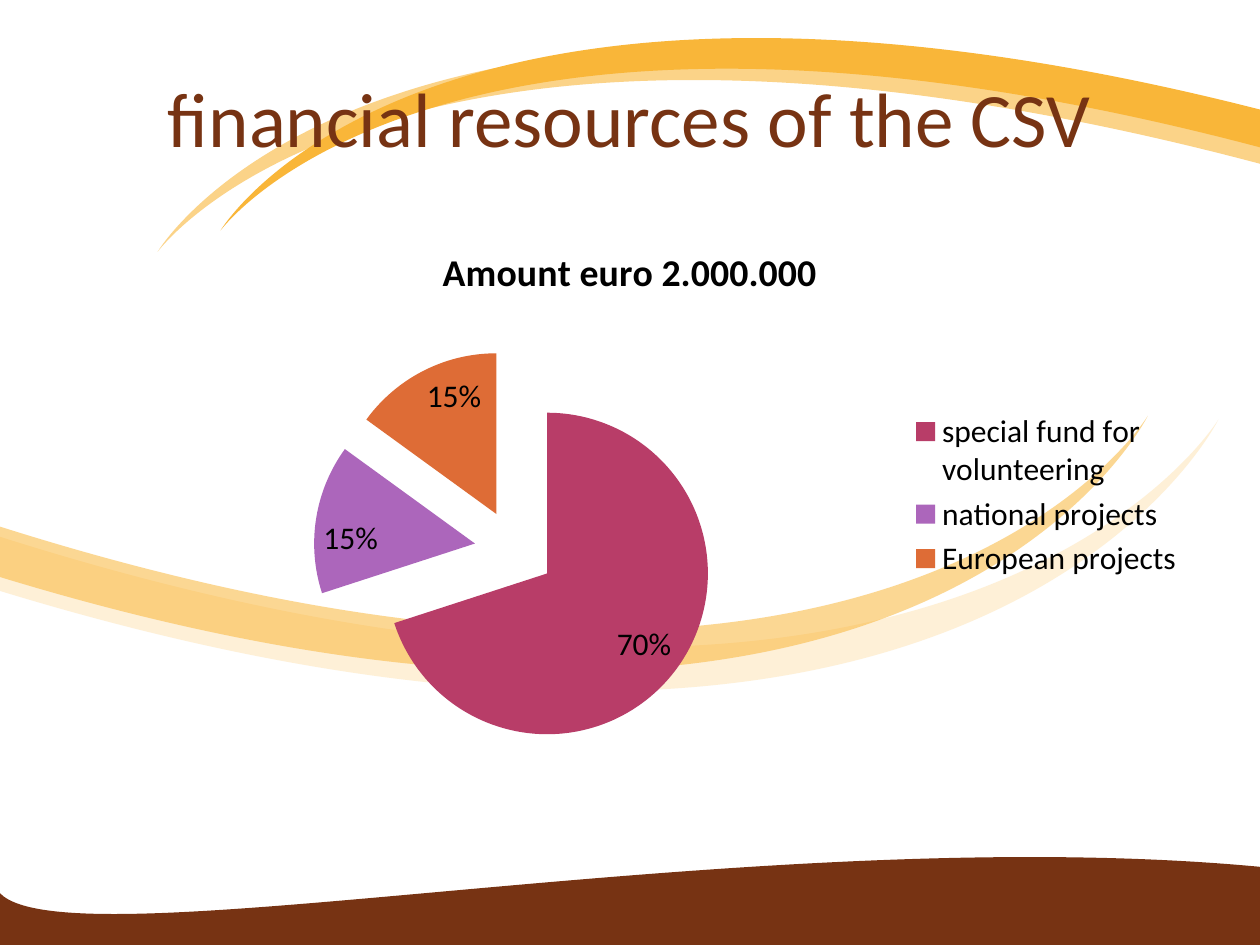
from lxml import etree
from pptx import Presentation
from pptx.chart.data import CategoryChartData
from pptx.dml.color import RGBColor
from pptx.enum.chart import XL_CHART_TYPE, XL_LABEL_POSITION, XL_LEGEND_POSITION
from pptx.enum.text import MSO_ANCHOR, PP_ALIGN
from pptx.oxml.ns import qn
from pptx.util import Inches, Pt

COLORS = {
    "brown": "773313", "cream": "FEF0D7", "sand": "FBD388", "amber": "F9B639",
    "text": "000000", "berry": "B83D68", "violet": "AC66BB", "orange": "DE6C36",
}
FONT = "Calibri"


class SlideBuilder:
    def __init__(self, slide):
        self.slide = slide

    def color(self, name):
        return RGBColor.from_string(COLORS[name])

    def style(self, font, size, color, bold=False):
        font.name, font.size, font.bold = FONT, Pt(size), bold
        font.color.rgb = self.color(color)

    def ribbon(self, start, segments, color, opacity=None):
        """Filled outline; a segment is one line end, or two controls and an end."""
        points = [(Inches(x), Inches(y)) for segment in segments for x, y in segment]
        builder = self.slide.shapes.build_freeform(Inches(start[0]), Inches(start[1]))
        builder.add_line_segments(points, close=True)
        shape = builder.convert_to_shape()
        shape.shadow.inherit = False
        shape.fill.solid()
        shape.fill.fore_color.rgb = self.color(color)
        shape.line.fill.background()

        # Merge each group of three steps into one cubic curve
        steps = iter(list(shape._element.iter(qn("a:lnTo"))))
        for segment in segments:
            group = [next(steps) for _ in segment]
            if len(group) == 3:
                curve = etree.Element(qn("a:cubicBezTo"))
                group[0].addprevious(curve)
                for step in group:
                    curve.append(step[0])
                    step.getparent().remove(step)

        if opacity:
            tone = shape._element.spPr.find(".//" + qn("a:srgbClr"))
            etree.SubElement(tone, qn("a:alpha"), val=str(opacity * 1000))

    def title(self, text, left, top, width, height):
        title = self.slide.shapes.title
        title.left, title.top = Inches(left), Inches(top)
        title.width, title.height = Inches(width), Inches(height)
        frame = title.text_frame
        frame.text = text
        frame.word_wrap = True
        frame.vertical_anchor = MSO_ANCHOR.MIDDLE
        frame.paragraphs[0].alignment = PP_ALIGN.CENTER
        self.style(frame.paragraphs[0].runs[0].font, 44, "brown")
        # Bring the title in front of the ribbons
        self.slide.shapes._spTree.append(title._element)

    def pie(self, heading, shares, slice_colors, left, top, width, height):
        data = CategoryChartData()
        data.categories = list(shares)
        data.add_series("Series 1", list(shares.values()))
        chart = self.slide.shapes.add_chart(
            XL_CHART_TYPE.PIE, Inches(left), Inches(top),
            Inches(width), Inches(height), data).chart
        self.style(chart.font, 18, "text")

        chart.has_title = True
        chart.chart_title.text_frame.text = heading
        heading_run = chart.chart_title.text_frame.paragraphs[0].runs[0]
        self.style(heading_run.font, 21.6, "text", bold=True)

        chart.has_legend = True
        chart.legend.position = XL_LEGEND_POSITION.RIGHT
        chart.legend.include_in_layout = False
        self.style(chart.legend.font, 18, "text")

        plot = chart.plots[0]
        plot.vary_by_categories = True
        series = plot.series[0]
        for index, color in enumerate(slice_colors):
            fill = series.points[index].format.fill
            fill.solid()
            fill.fore_color.rgb = self.color(color)
        # Pull the slices apart
        explosion = etree.Element(qn("c:explosion"), val="25")
        series._element.find(qn("c:dPt")).addprevious(explosion)

        plot.has_data_labels = True
        labels = plot.data_labels
        labels.show_percentage, labels.show_value = True, False
        labels.number_format, labels.number_format_is_linked = "0%", False
        labels.position = XL_LABEL_POSITION.INSIDE_END
        self.style(labels.font, 18, "text")
        self.place_plot(chart, 1.99 / width, 1.02 / height, 3.19 / width, 3.19 / height)

    def place_plot(self, chart, x, y, w, h):
        """Set the plot area as fractions of the chart."""
        plot_area = chart._chartSpace.find(".//" + qn("c:plotArea"))
        layout = plot_area.find(qn("c:layout"))
        if layout is None:
            layout = etree.Element(qn("c:layout"))
            plot_area.insert(0, layout)
        manual = etree.SubElement(layout, qn("c:manualLayout"))
        settings = [("layoutTarget", "inner"), ("xMode", "edge"), ("yMode", "edge"),
                    ("x", x), ("y", y), ("w", w), ("h", h)]
        for tag, value in settings:
            etree.SubElement(manual, qn("c:" + tag), val=str(value))


def main():
    deck = Presentation()
    deck.slide_width, deck.slide_height = Inches(10), Inches(7.5)
    page = SlideBuilder(deck.slides.add_slide(deck.slide_layouts[5]))

    # Ground wave
    page.ribbon((0, 7.09), [
        ((0.56, 7.67), (5.96, 6.5), (10, 6.88)),
        ((10, 7.09), (10.01, 7.32), (10.01, 7.54)),
        ((0, 7.51),),
    ], "brown")

    # Swooshes: outer edge to the tip, inner edge back, then the blunt end
    swooshes = [
        ((0, 4.26), (7.63, 6.68), (9.67, 3.33), (7.82, 7.08), (0, 4.69), "cream", None),
        ((10, 1.3), (3.09, -0.53), (1.25, 2), (2.92, -0.83), (10, 0.97), "sand", None),
        ((10, 1.17), (3.49, -0.55), (1.75, 1.83), (3.33, -0.83), (10, 0.87), "amber", None),
        ((0, 4.18), (7.2, 6.46), (9.11, 3.3), (7.37, 6.83), (0, 4.58), "amber", 54),
    ]
    for start, outer, tip, inner, end, color, opacity in swooshes:
        page.ribbon(start, [(outer, tip, tip), (tip, inner, end), (end, start, start)],
                    color, opacity)

    # Title and chart
    page.title("financial resources of the CSV", 0.5, 0.3, 9, 1.25)
    page.pie(
        "Amount euro 2.000.000",
        {"special fund for volunteering": 70, "national projects": 15,
         "European projects": 15},
        ["berry", "violet", "orange"], 0.5, 1.75, 9, 4.36)

    deck.save("out.pptx")


if __name__ == "__main__":
    main()
